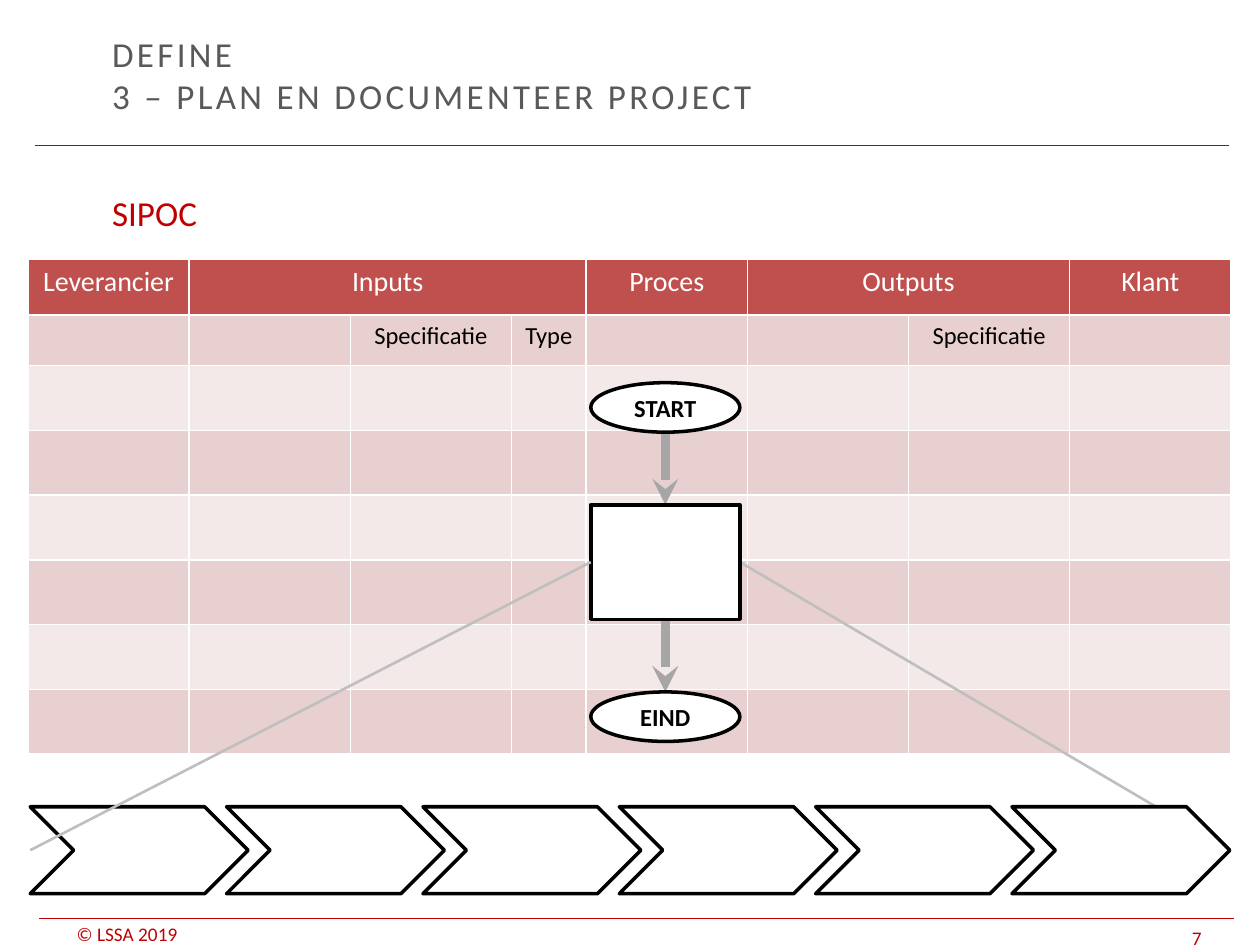
from lxml import etree
from pptx import Presentation
from pptx.dml.color import RGBColor
from pptx.enum import shapes, text
from pptx.oxml import ns
from pptx.util import Pt

RED, GREY, LIGHT_GREY, WHITE, BLACK = "C00000", "A6A6A6", "BFBFBF", "FFFFFF", "000000"
HEADER_FILL, BAND_FILLS = "C0504D", ("E8D0D0", "F4E9E9")


def color(value):
    return RGBColor.from_string(value)


def add_xml(parent, tag, **attributes):
    return etree.SubElement(parent, ns.qn(tag), **attributes)


def write(frame, words, size=14, ink=BLACK, bold=False, spacing=None,
          align=text.PP_ALIGN.LEFT, anchor=text.MSO_ANCHOR.TOP):
    frame.word_wrap = True
    frame.vertical_anchor = anchor
    paragraph = frame.paragraphs[0]
    paragraph.text = words
    paragraph.alignment = align
    for run in paragraph.runs:
        run.font.name = "Calibri"
        run.font.size = Pt(size)
        run.font.bold = bold
        run.font.color.rgb = color(ink)
        if spacing:
            run.font._element.set("spc", str(spacing))


def add_text(slide, box, words, margin_y=3.6, **format):
    frame = slide.shapes.add_textbox(*map(Pt, box)).text_frame
    frame.margin_top = frame.margin_bottom = Pt(margin_y)
    write(frame, words, **format)


def add_line(slide, start, end, ink, width, arrow=False):
    line = slide.shapes.add_connector(
        shapes.MSO_CONNECTOR.STRAIGHT, *map(Pt, (*start, *end)))
    line.line.color.rgb = color(ink)
    line.line.width = Pt(width)
    if arrow:
        add_xml(line.line._get_or_add_ln(), "a:tailEnd", type="stealth")
    add_xml(line._element.spPr, "a:effectLst")
    return line


def add_outlined(slide, kind, box, words=""):
    shape = slide.shapes.add_shape(kind, *map(Pt, box))
    shape.shadow.inherit = False
    shape.fill.solid()
    shape.fill.fore_color.rgb = color(WHITE)
    shape.line.color.rgb = color(BLACK)
    shape.line.width = Pt(2)
    if words:
        write(shape.text_frame, words, bold=True, align=text.PP_ALIGN.CENTER,
              anchor=text.MSO_ANCHOR.MIDDLE)
    return shape


def add_frame(slide, width):
    """Header and footer: rules, title, subtitle, copyright and page number."""
    for left, y in ((20, 83), (22.5, 525)):
        add_line(slide, (left, y), (left + width, y), RED, 0.75)
    for box, words in (((36.7, 527, 102, 13), "© LSSA 2019"),
                       ((674, 526.3, 46, 16), "7")):
        add_text(slide, box, words, margin_y=0, size=11, ink=RED,
                 anchor=text.MSO_ANCHOR.BOTTOM)
    add_text(slide, (57, 18.7, 510, 47.5), "DEFINE\v3 – PLAN EN DOCUMENTEER PROJECT",
             size=20, ink="595959", spacing=190, anchor=text.MSO_ANCHOR.MIDDLE)
    add_text(slide, (57, 106, 623, 37.5), "SIPOC", size=20, ink=RED)


def style_cell(cell, fill):
    for side in ("a:lnL", "a:lnR", "a:lnT", "a:lnB"):
        border = add_xml(cell._tc.get_or_add_tcPr(), side, w=str(Pt(1)))
        add_xml(add_xml(border, "a:solidFill"), "a:srgbClr", val=WHITE)
    cell.fill.solid()
    cell.fill.fore_color.rgb = color(fill)


def add_sipoc_table(slide, left, top):
    widths = [92.1] * 3 + [42.7] + [92.1] * 4
    heights = [32, 29] + [37] * 6
    table = slide.shapes.add_table(
        len(heights), len(widths), Pt(left), Pt(top),
        Pt(sum(widths)), Pt(sum(heights))).table
    for column, width in zip(table.columns, widths):
        column.width = Pt(width)
    for index, (row, height) in enumerate(zip(table.rows, heights)):
        row.height = Pt(height)
        for cell in row.cells:
            style_cell(cell, BAND_FILLS[(index - 1) % 2] if index else HEADER_FILL)

    headers = {0: ("Leverancier", 1), 1: ("Inputs", 3), 4: ("Proces", 1),
               5: ("Outputs", 2), 7: ("Klant", 1)}
    for column, (words, span) in headers.items():
        cell = table.cell(0, column)
        if span > 1:
            cell.merge(table.cell(0, column + span - 1))
        write(cell.text_frame, words, size=16, ink=WHITE, align=text.PP_ALIGN.CENTER)
    for column, words in {2: "Specificatie", 3: "Type", 6: "Specificatie"}.items():
        write(table.cell(1, column).text_frame, words, align=text.PP_ALIGN.CENTER)


def add_chevrons(slide, left, top, width, height, count=6):
    chevron_width = 124.5
    step = (width - chevron_width) / (count - 1)
    for index in range(count):
        add_outlined(slide, shapes.MSO_SHAPE.CHEVRON,
                     (left + index * step, top, chevron_width, height))


def add_process(slide, left, top, width, band):
    """Flow from start to end, with its middle step unfolded into the chevron band."""
    band_left, band_top, band_width, band_height = band
    oval_height, step_height, gap = 28.3, 65.4, 41.5
    step_top = top + oval_height + gap
    step_bottom = step_top + step_height
    center, middle = left + width / 2, step_top + step_height / 2
    band_middle = band_top + band_height / 2

    right_ray = add_line(slide, (left + width, middle),
                         (band_left + band_width, band_middle), LIGHT_GREY, 1.5)
    add_chevrons(slide, *band)
    arrow_in, arrow_out = [
        add_line(slide, (center, y), (center, y + gap), GREY, 5, arrow=True)
        for y in (top + oval_height, step_bottom)]
    add_outlined(slide, shapes.MSO_SHAPE.OVAL, (left, top, width, oval_height), "START")
    step = add_outlined(slide, shapes.MSO_SHAPE.RECTANGLE,
                        (left, step_top, width, step_height))
    add_outlined(slide, shapes.MSO_SHAPE.OVAL,
                 (left, step_bottom + gap, width, oval_height), "EIND")
    left_ray = add_line(slide, (left, middle), (band_left, band_middle), LIGHT_GREY, 1.5)

    arrow_in.end_connect(step, 0)
    left_ray.begin_connect(step, 1)
    arrow_out.begin_connect(step, 2)
    right_ray.begin_connect(step, 3)


def main():
    presentation = Presentation()
    presentation.slide_width, presentation.slide_height = Pt(720), Pt(540)
    slide = presentation.slides.add_slide(presentation.slide_layouts[6])
    add_frame(slide, width=682.5)
    add_sipoc_table(slide, left=16, top=148)
    add_process(slide, left=337.6, top=218.7, width=85.2, band=(17.3, 461, 685.5, 49.7))
    presentation.save("out.pptx")


if __name__ == "__main__":
    main()
